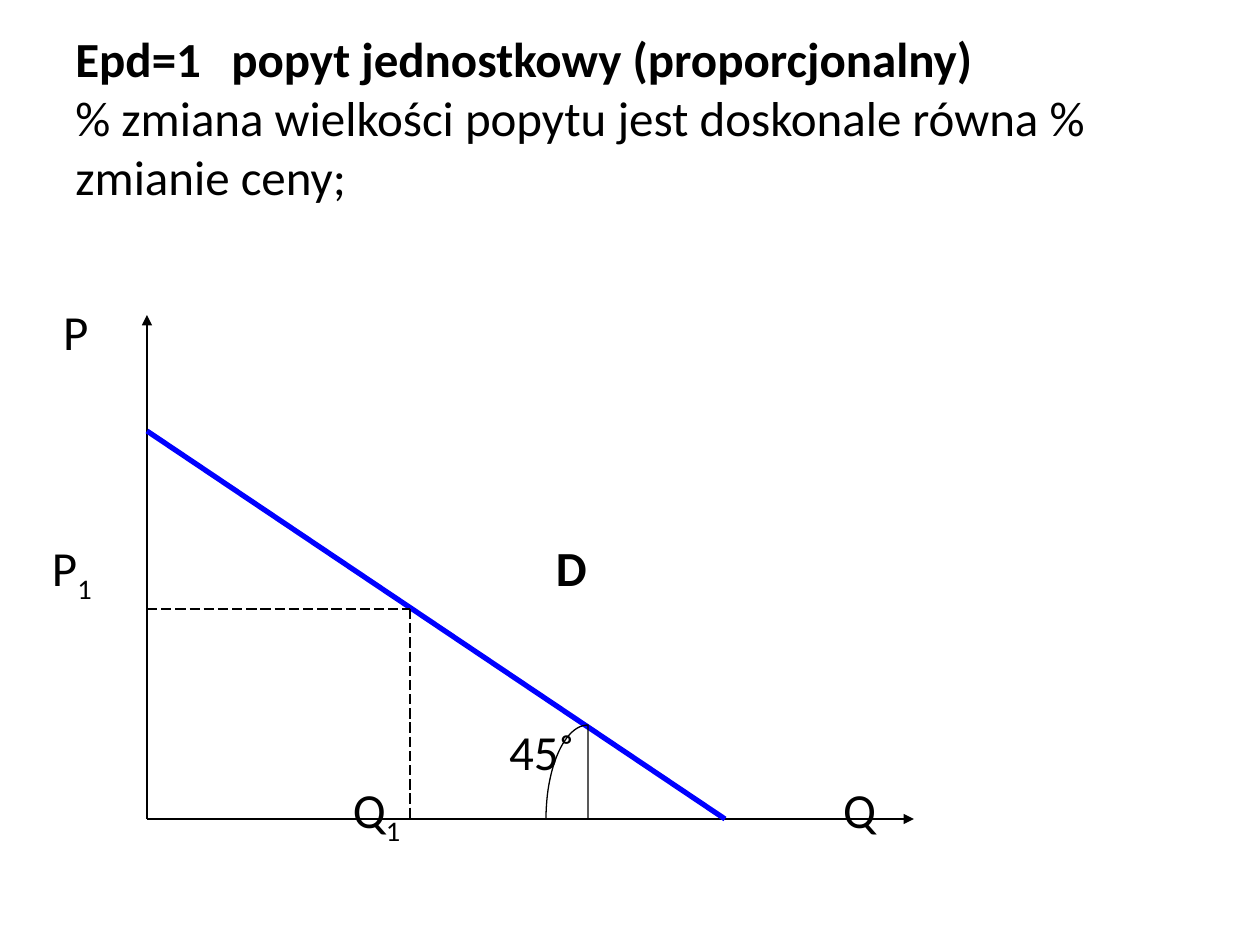
import math

from lxml import etree
from pptx import Presentation
from pptx import util as u
from pptx.dml.color import RGBColor
from pptx.enum import dml, shapes, text
from pptx.oxml import ns

FONT = "Calibri"
SIZE = 28
BLACK = "000000"
BLUE = "0000FF"
ORIGIN_X, ORIGIN_Y = 147, 819
PRICE_Y, QUANTITY_X = 609, 410
ANGLE_X, ANGLE_TOP = 588, 725


def px(value):
    return u.Emu(round(value * 914400 / 126))


def color(value):
    return RGBColor.from_string(value)


def add_run(paragraph, words, bold=False, subscript=False):
    run = paragraph.add_run()
    run.text = words
    run.font.name = FONT
    run.font.size = u.Pt(SIZE)
    run.font.bold = bold
    run.font.color.rgb = color(BLACK)
    if subscript:
        run.font._element.set("baseline", "-25000")


def add_text_frame(slide, left, top, width, height):
    frame = slide.shapes.add_textbox(px(left), px(top), px(width), px(height)).text_frame
    frame.word_wrap = True
    return frame


def add_title(slide):
    frame = add_text_frame(slide, 63, 38, 1134, 158)
    frame.vertical_anchor = text.MSO_ANCHOR.MIDDLE
    heading = frame.paragraphs[0]
    tabs = etree.SubElement(heading._p.get_or_add_pPr(), ns.qn("a:tabLst"))
    etree.SubElement(tabs, ns.qn("a:tab"), pos=str(px(156)), algn="l")
    add_run(heading, "Epd=1\tpopyt jednostkowy (proporcjonalny)", bold=True)
    add_run(frame.add_paragraph(), "% zmiana wielkości popytu jest doskonale równa % zmianie ceny;")


def add_label(slide, left, top, words, index="", bold=False):
    frame = add_text_frame(slide, left, top, 80, 60)
    frame.margin_left = frame.margin_right = frame.margin_top = frame.margin_bottom = 0
    paragraph = frame.paragraphs[0]
    add_run(paragraph, words, bold)
    if index:
        add_run(paragraph, index, subscript=True)


def add_line(slide, start, end, stroke=BLACK, width=0.75, dashed=False, arrow=False):
    connector = slide.shapes.add_connector(
        shapes.MSO_CONNECTOR.STRAIGHT, *map(px, start + end))
    connector.line.color.rgb = color(stroke)
    connector.line.width = u.Pt(width)
    if dashed:
        connector.line.dash_style = dml.MSO_LINE.LONG_DASH
    if arrow:
        etree.SubElement(connector.line._get_or_add_ln(), ns.qn("a:tailEnd"), type="triangle")
    etree.SubElement(connector._element.spPr, ns.qn("a:effectLst"))


def add_angle(slide, radius_x=42, steps=24):
    radius_y = ORIGIN_Y - ANGLE_TOP
    turns = [math.pi / 2 * step / steps for step in range(1, steps + 1)]
    arc = [(px(ANGLE_X - radius_x * math.sin(turn)),
            px(ORIGIN_Y - radius_y * math.cos(turn))) for turn in turns]
    builder = slide.shapes.build_freeform(px(ANGLE_X), px(ANGLE_TOP))
    builder.add_line_segments(arc + [(px(ANGLE_X), px(ORIGIN_Y))], close=True)
    angle = builder.convert_to_shape()
    angle.shadow.inherit = False
    angle.fill.background()
    angle.line.color.rgb = color(BLACK)
    angle.line.width = u.Pt(0.75)


def main():
    deck = Presentation()
    deck.slide_width, deck.slide_height = px(1260), px(945)
    slide = deck.slides.add_slide(deck.slide_layouts[6])

    add_title(slide)
    add_label(slide, 63, 302, "P")
    add_label(slide, 52, 538, "P", index="1")
    add_label(slide, 556, 538, "D", bold=True)
    add_label(slide, 509, 722, "45˚")
    add_label(slide, 353, 780, "Q", index="1")
    add_label(slide, 843, 780, "Q")

    origin = (ORIGIN_X, ORIGIN_Y)
    equilibrium = (QUANTITY_X, PRICE_Y)
    add_line(slide, origin, (ORIGIN_X, 315), arrow=True)
    add_line(slide, origin, (914, ORIGIN_Y), arrow=True)
    add_line(slide, (ORIGIN_X, 431), (725, ORIGIN_Y), BLUE, 3)
    add_angle(slide)
    add_line(slide, (ORIGIN_X, PRICE_Y), equilibrium, dashed=True)
    add_line(slide, equilibrium, (QUANTITY_X, ORIGIN_Y), dashed=True)

    deck.save("out.pptx")


if __name__ == "__main__":
    main()
